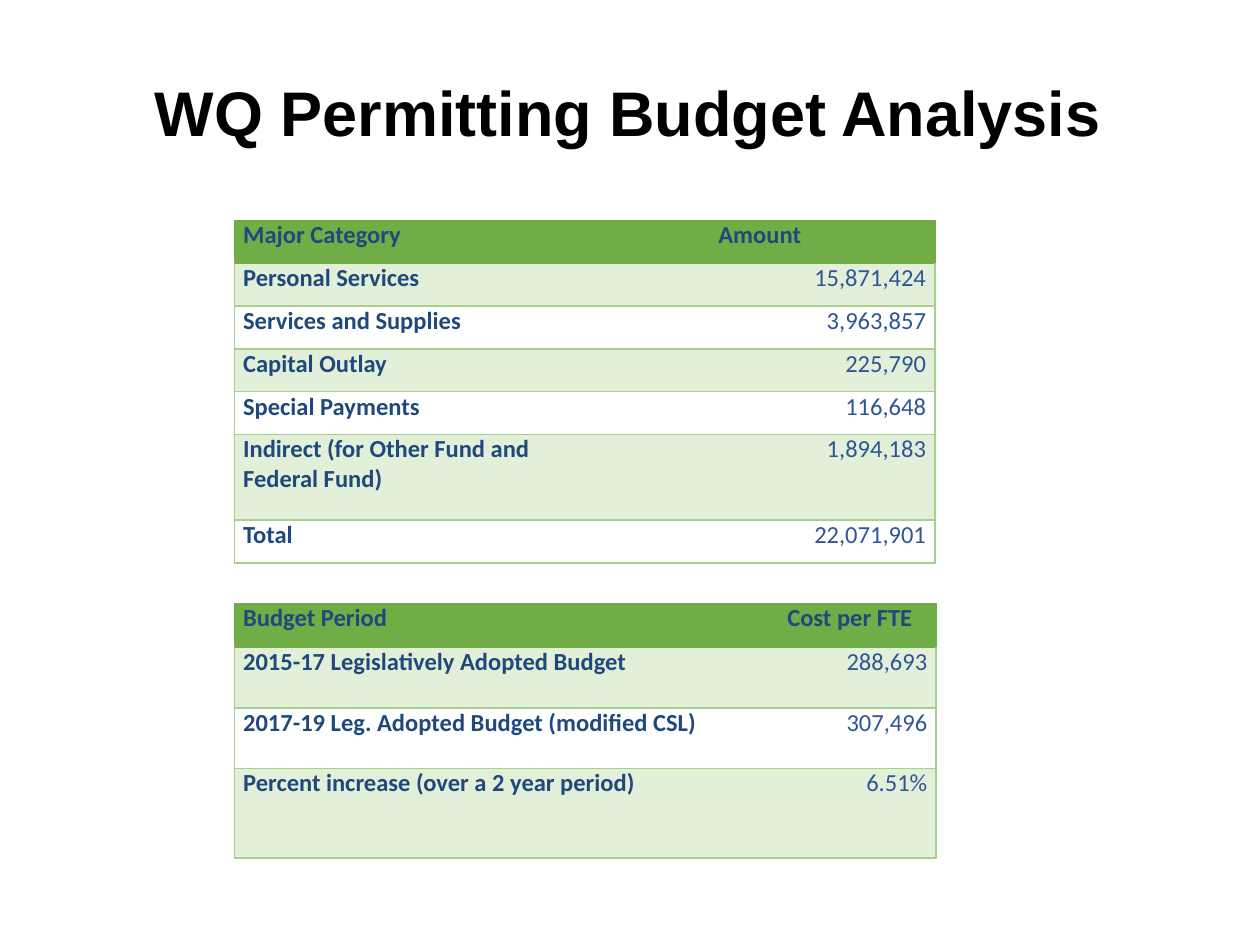
from lxml import etree
from pptx import Presentation
from pptx import util as u
from pptx.dml.color import RGBColor
from pptx.enum import text
from pptx.oxml.ns import qn

GREEN, PALE, WHITE, RULE = "70AD47", "E2EFD9", "FFFFFF", "A8D08D"
NAVY, BLUE, BLACK = "1F497D", "2F5597", "000000"
ALIGN = text.PP_ALIGN

CATEGORIES = [
    ("Major Category", "Amount"),
    ("Personal Services", "15,871,424"),
    ("Services and Supplies", "3,963,857"),
    ("Capital Outlay", "225,790"),
    ("Special Payments", "116,648"),
    ("Indirect (for Other Fund and Federal Fund)", "1,894,183"),
    ("Total", "22,071,901"),
]
PERIODS = [
    ("Budget Period", "Cost per FTE"),
    ("2015-17 Legislatively Adopted Budget", "288,693"),
    ("2017-19 Leg. Adopted Budget (modified CSL)", "307,496"),
    ("Percent increase (over a 2 year period)", "6.51%"),
]


def rgb(value):
    return RGBColor.from_string(value)


def apply(target, values):
    for name, value in values.items():
        setattr(target, name, value)


class BudgetSlide:
    """Holds the style and the current slide, and draws its elements."""

    def __init__(self, deck):
        self.slide = deck.slides.add_slide(deck.slide_layouts[5])
        self.margins = {
            "margin_left": u.Inches(0.07), "margin_right": u.Inches(0.07),
            "margin_top": 0, "margin_bottom": 0,
        }

    def wording(self, frame, words, align, color, **font):
        paragraph = frame.paragraphs[0]
        paragraph.alignment = align
        run = paragraph.add_run()
        run.text = words
        apply(run.font, font)
        run.font.color.rgb = rgb(color)
        return paragraph

    def title(self, words, left, top, width, height):
        heading = self.slide.shapes.title
        apply(heading, {
            "left": u.Inches(left), "top": u.Inches(top),
            "width": u.Inches(width), "height": u.Inches(height),
        })
        frame = heading.text_frame
        apply(frame, {
            "vertical_anchor": text.MSO_ANCHOR.TOP, "word_wrap": True,
            "auto_size": text.MSO_AUTO_SIZE.NONE,
        })
        paragraph = self.wording(frame, words, ALIGN.CENTER, BLACK,
                                 name="Arial", size=u.Pt(36), bold=True)
        paragraph.space_before = u.Pt(3.5)

    def borders(self, cell, colors):
        properties = cell._tc.get_or_add_tcPr()
        for place, (side, color) in enumerate(colors.items()):
            line = etree.Element(qn(f"a:ln{side}"), w=str(u.Pt(1)))
            if color:
                fill = etree.SubElement(line, qn("a:solidFill"))
                etree.SubElement(fill, qn("a:srgbClr"), val=color)
            else:
                etree.SubElement(line, qn("a:noFill"))
            properties.insert(place, line)

    def cell(self, cell, words, row, column):
        header, label = row == 0, column == 0
        apply(cell, self.margins)
        cell.fill.solid()
        cell.fill.fore_color.rgb = rgb(GREEN if header else PALE if row % 2 else WHITE)
        align = ALIGN.LEFT if label else ALIGN.CENTER if header else ALIGN.RIGHT
        strong = header or label
        self.wording(cell.text_frame, words, align, NAVY if strong else BLUE,
                     name="Calibri", size=u.Pt(14), bold=strong)
        edge = GREEN if header else RULE
        self.borders(cell, {
            "L": edge if label else None,
            "R": None if label else edge,
            "T": GREEN if row < 2 else RULE,
            "B": edge,
        })

    def table(self, records, left, top, widths, heights):
        table = self.slide.shapes.add_table(
            len(records), len(widths), u.Inches(left), u.Inches(top),
            u.Inches(sum(widths)), u.Inches(sum(heights))).table
        table.horz_banding = False
        for column, width in zip(table.columns, widths):
            column.width = u.Inches(width)
        for row, height in zip(table.rows, heights):
            row.height = u.Inches(height)
        for row, record in enumerate(records):
            for column, words in enumerate(record):
                self.cell(table.cell(row, column), words, row, column)


def main():
    deck = Presentation()
    deck.slide_width, deck.slide_height = u.Inches(10), u.Inches(7.5)
    budget = BudgetSlide(deck)
    budget.title("WQ Permitting Budget Analysis", 1.07, 0.53, 7.83, 5.17)
    budget.table(CATEGORIES, 1.86, 1.75, [2.78, 2.78], [0.34] * 5 + [0.68, 0.34])
    budget.table(PERIODS, 1.86, 4.79, [4.2, 1.37], [0.35, 0.48, 0.48, 0.71])
    deck.save("out.pptx")


if __name__ == "__main__":
    main()
